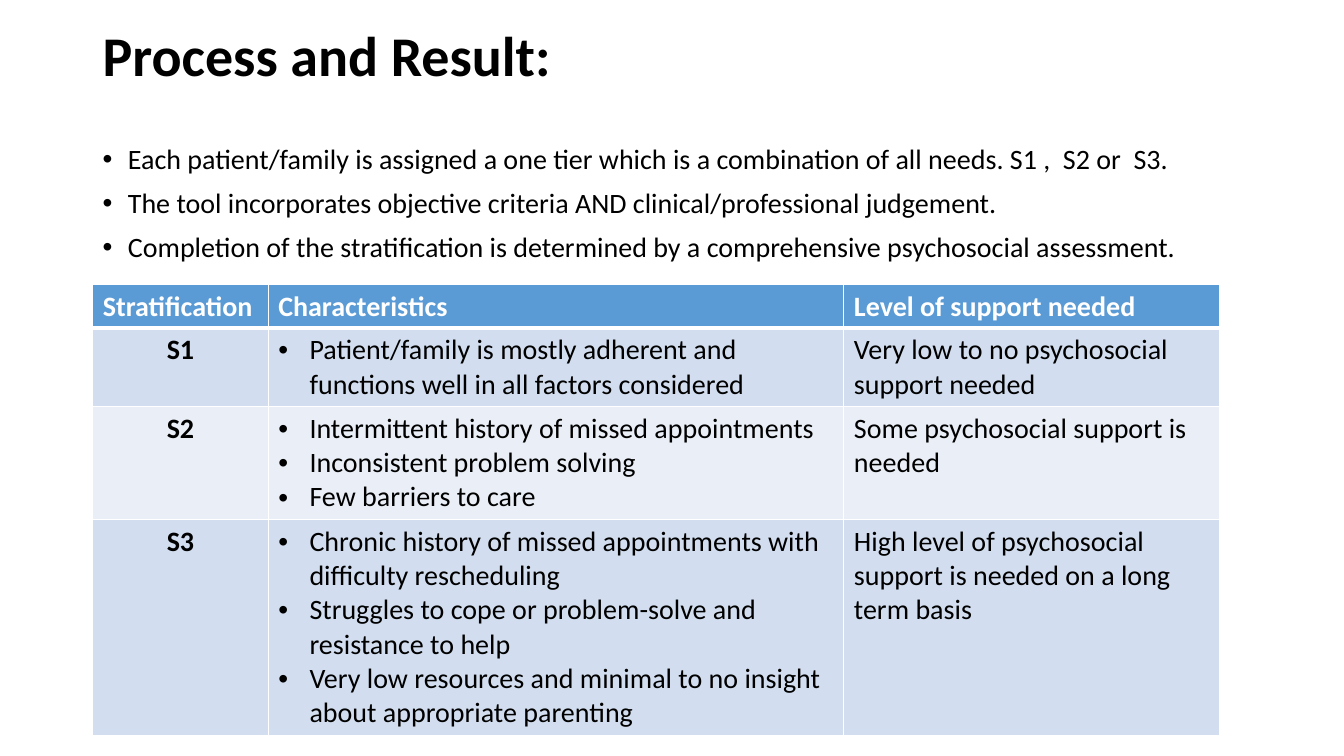
from lxml import etree
from pptx import Presentation
from pptx.dml.color import RGBColor
from pptx.enum.text import MSO_ANCHOR, PP_ALIGN
from pptx.oxml.ns import qn
from pptx.util import Inches, Pt

LEFT, CENTER = PP_ALIGN.LEFT, PP_ALIGN.CENTER
TOP, MIDDLE = MSO_ANCHOR.TOP, MSO_ANCHOR.MIDDLE

# Content
TITLE = "Process and Result:"
POINTS = [
    "Each patient/family is assigned a one tier which is a combination of all needs. S1 ,  S2 or  S3.",
    "The tool incorporates objective criteria AND clinical/professional judgement.",
    "Completion of the stratification is determined by a comprehensive psychosocial assessment.",
]
HEADERS = ["Stratification", "Characteristics", "Level of support needed"]
TIERS = [
    ("S1",
     ["Patient/family is mostly adherent and functions well in all factors considered"],
     "Very low to no psychosocial support needed"),
    ("S2",
     ["Intermittent history of missed appointments",
      "Inconsistent problem solving",
      "Few barriers to care"],
     "Some psychosocial support is needed"),
    ("S3",
     ["Chronic history of missed appointments with difficulty rescheduling",
      "Struggles to cope or problem-solve and resistance to help",
      "Very low resources and minimal to no insight about appropriate parenting"],
     "High level of psychosocial support is needed on a long term basis"),
]

# Theme and layout
THEME = {
    "font": "Calibri", "title": 40, "body": 20,
    "text": "000000", "white": "FFFFFF", "header": "5B9BD5",
    "bands": ["D2DEEF", "EAEFF7"],
}
MARGIN, TEXT_W = 0.92, 11.5
COL_WIDTHS = [1.74, 5.71, 3.73]
ROW_HEIGHTS = [0.43, 0.78, 1.12, 2.14]
TABLE_TOP = 2.82


def write_text(tf, lines, size=THEME["body"], color=THEME["text"], bold=False,
               align=LEFT, indent=0, spacing=None, gap=0):
    """Fill a text frame; an indent turns its lines into bullets."""
    tf.word_wrap = True
    for i, line in enumerate(lines):
        p = tf.add_paragraph() if i else tf.paragraphs[0]
        p.alignment = align
        if indent:
            pPr = p._p.get_or_add_pPr()
            pPr.set("marL", str(Inches(indent)))
            pPr.set("indent", str(-Inches(indent)))
            etree.SubElement(pPr, qn("a:buFont"), typeface="Arial")
            etree.SubElement(pPr, qn("a:buChar"), char="•")
        if spacing:
            p.line_spacing = spacing
        if gap and i:
            p.space_before = Pt(gap)
        r = p.add_run()
        r.text = line
        r.font.name, r.font.size, r.font.bold = THEME["font"], Pt(size), bold
        r.font.color.rgb = RGBColor.from_string(color)


def add_text(slide, top, height, lines, anchor=TOP, **fmt):
    box = slide.shapes.add_textbox(Inches(MARGIN), Inches(top), Inches(TEXT_W), Inches(height))
    box.text_frame.vertical_anchor = anchor
    write_text(box.text_frame, lines, **fmt)


def style_cell(cell, fill, bottom=1):
    tcPr = cell._tc.get_or_add_tcPr()
    for side, width in (("L", 1), ("R", 1), ("T", 1), ("B", bottom)):
        ln = etree.SubElement(tcPr, qn(f"a:ln{side}"), w=str(Pt(width)))
        solid = etree.SubElement(ln, qn("a:solidFill"))
        etree.SubElement(solid, qn("a:srgbClr"), val=THEME["white"])
    cell.fill.solid()
    cell.fill.fore_color.rgb = RGBColor.from_string(fill)


prs = Presentation()
prs.slide_width, prs.slide_height = Inches(13.33), Inches(7.5)
slide = prs.slides.add_slide(prs.slide_layouts[6])

# Title and bullet points
add_text(slide, 0.01, 1.14, [TITLE], anchor=MIDDLE, size=THEME["title"], bold=True, spacing=0.9)
add_text(slide, 1.39, 1.77, POINTS, indent=0.25, spacing=0.9, gap=10)

# Tier table
table = slide.shapes.add_table(
    len(TIERS) + 1, len(HEADERS), Inches(MARGIN), Inches(TABLE_TOP),
    Inches(sum(COL_WIDTHS)), Inches(sum(ROW_HEIGHTS))).table
for column, width in zip(table.columns, COL_WIDTHS):
    column.width = Inches(width)
for row, height in zip(table.rows, ROW_HEIGHTS):
    row.height = Inches(height)

for c, header in enumerate(HEADERS):
    cell = table.cell(0, c)
    style_cell(cell, THEME["header"], bottom=3)
    write_text(cell.text_frame, [header], color=THEME["white"], bold=True)

for n, (tier, traits, support) in enumerate(TIERS):
    cells = table.rows[n + 1].cells
    for cell in cells:
        style_cell(cell, THEME["bands"][n % 2])
    name_cell, traits_cell, support_cell = cells
    write_text(name_cell.text_frame, [tier], bold=True, align=CENTER)
    write_text(traits_cell.text_frame, traits, indent=0.31)
    write_text(support_cell.text_frame, [support])

prs.save("out.pptx")
